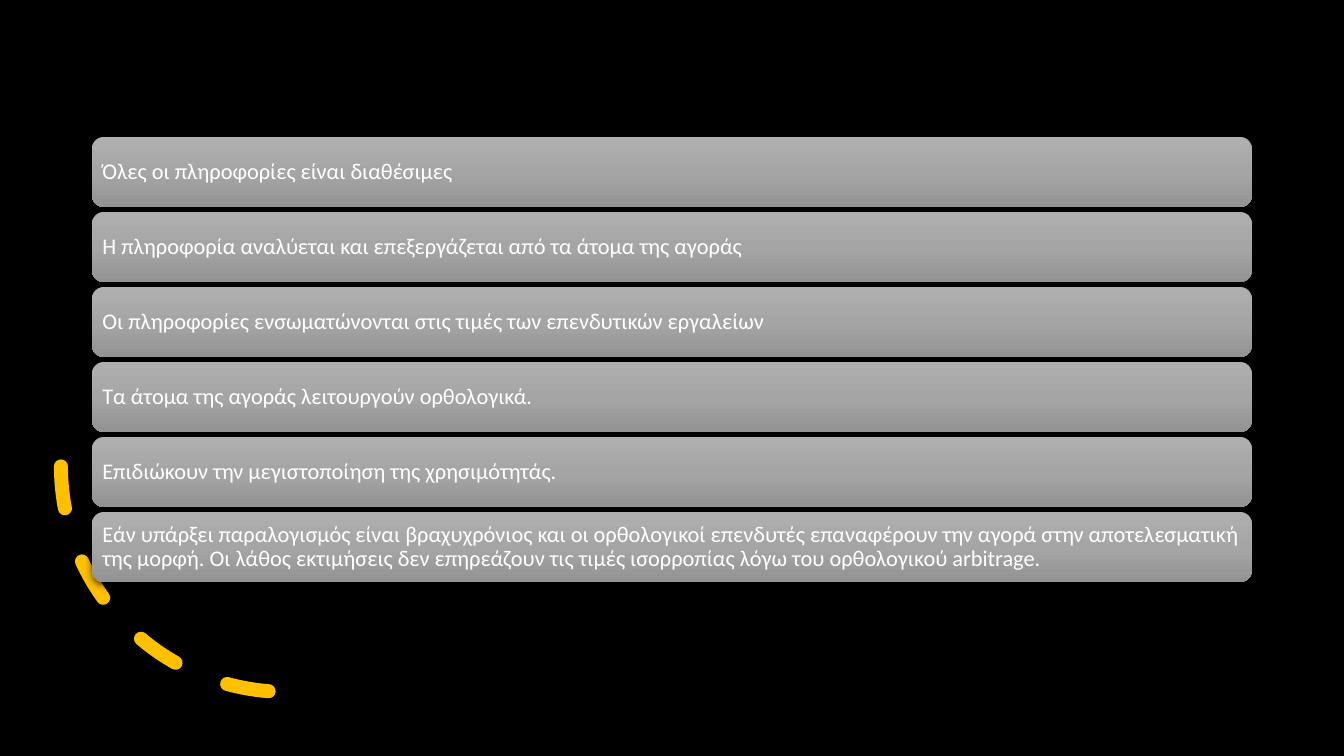
from copy import deepcopy
from dataclasses import dataclass

from lxml import etree
from pptx import Presentation
from pptx import util as u
from pptx.dml.color import RGBColor
from pptx.enum import dml, shapes, text
from pptx.oxml.ns import qn
from pptx.shapes.autoshape import Shape
from pptx.slide import Slide

EMU_PER_PX = 12192000 / 1344
BAR_LEFT, BAR_TOP, BAR_WIDTH, BAR_HEIGHT, BAR_PITCH = 92, 137, 1160, 70, 75
BAR_GRADIENT = {0: "AFAFAF", 0.5: "A5A5A5", 1: "939393"}
STATEMENTS = (
    "Όλες οι πληροφορίες είναι διαθέσιμες",
    "Η πληροφορία αναλύεται και επεξεργάζεται από τα άτομα της αγοράς",
    "Οι πληροφορίες ενσωματώνονται στις τιμές των επενδυτικών εργαλείων",
    "Τα άτομα της αγοράς λειτουργούν ορθολογικά.",
    "Επιδιώκουν την μεγιστοποίηση της χρησιμότητάς.",
    "Εάν υπάρξει παραλογισμός είναι βραχυχρόνιος και οι ορθολογικοί επενδυτές "
    "επαναφέρουν την αγορά στην αποτελεσματική της μορφή. Οι λάθος εκτιμήσεις δεν "
    "επηρεάζουν τις τιμές ισορροπίας λόγω του ορθολογικού arbitrage.",
)


@dataclass(frozen=True)
class Box:
    left: int
    top: int
    width: int
    height: int


@dataclass(frozen=True)
class Bar:
    box: Box
    statement: str


def px(length: int) -> u.Emu:
    return u.Emu(round(length * EMU_PER_PX))


def color(value: str) -> RGBColor:
    return RGBColor.from_string(value)


def apply_format(target: object, values: dict) -> None:
    for name, value in values.items():
        setattr(target, name, value)


def add_shape(slide: Slide, kind: shapes.MSO_SHAPE, box: Box) -> Shape:
    shape = slide.shapes.add_shape(
        kind, px(box.left), px(box.top), px(box.width), px(box.height)
    )
    shape.shadow.inherit = False
    shape.line.fill.background()
    return shape


def add_backdrop(slide: Slide) -> None:
    shape = add_shape(slide, shapes.MSO_SHAPE.RECTANGLE, Box(0, -1, 1344, 757))
    shape.fill.solid()
    shape.fill.fore_color.rgb = color("000000")


def add_dashed_arc(slide: Slide) -> None:
    shape = add_shape(slide, shapes.MSO_SHAPE.ARC, Box(61, 241, 451, 451))
    shape.fill.background()
    shape.rotation = 90
    shape._element.spPr.find(qn("a:xfrm")).set("flipV", "1")
    shape.line.color.rgb = color("FFC000")
    apply_format(
        shape.line, {"width": u.Pt(10), "dash_style": dml.MSO_LINE.DASH}
    )
    shape._element.spPr.find(qn("a:ln")).set("cap", "rnd")


def fill_gradient(shape: Shape) -> None:
    shape.fill.gradient()
    shape.fill.gradient_angle = 270
    stop_list = shape._element.spPr.find(qn("a:gradFill")).find(qn("a:gsLst"))
    stop_list.insert(1, deepcopy(stop_list[0]))
    for stop, (position, value) in zip(
        shape.fill.gradient_stops, BAR_GRADIENT.items()
    ):
        stop.position = position
        stop.color.rgb = color(value)


def add_shadow(shape: Shape) -> None:
    effects = shape._element.spPr.find(qn("a:effectLst"))
    shadow = etree.SubElement(
        effects,
        qn("a:outerShdw"),
        blurRad=str(u.Pt(4.5)),
        dist=str(u.Pt(1.5)),
        dir="5400000",
        algn="ctr",
        rotWithShape="0",
    )
    shade = etree.SubElement(shadow, qn("a:srgbClr"), val="000000")
    etree.SubElement(shade, qn("a:alpha"), val="63000")


def add_bar(slide: Slide, bar: Bar) -> None:
    shape = add_shape(slide, shapes.MSO_SHAPE.ROUNDED_RECTANGLE, bar.box)
    fill_gradient(shape)
    add_shadow(shape)
    frame = shape.text_frame
    margins = ("margin_left", "margin_top", "margin_right", "margin_bottom")
    apply_format(frame, dict.fromkeys(margins, px(7)))
    apply_format(
        frame, {"word_wrap": True, "vertical_anchor": text.MSO_ANCHOR.MIDDLE}
    )
    paragraph = frame.paragraphs[0]
    apply_format(
        paragraph, {"alignment": text.PP_ALIGN.LEFT, "line_spacing": 0.9}
    )
    run = paragraph.add_run()
    run.text = bar.statement
    apply_format(run.font, {"name": "Calibri", "size": u.Pt(16)})
    run.font.color.rgb = color("FFFFFF")


def main() -> None:
    presentation = Presentation()
    apply_format(
        presentation, {"slide_width": px(1344), "slide_height": px(756)}
    )
    slide = presentation.slides.add_slide(presentation.slide_layouts[6])
    add_backdrop(slide)
    add_dashed_arc(slide)
    for index, statement in enumerate(STATEMENTS):
        top = BAR_TOP + index * BAR_PITCH
        add_bar(slide, Bar(Box(BAR_LEFT, top, BAR_WIDTH, BAR_HEIGHT), statement))
    presentation.save("out.pptx")


if __name__ == "__main__":
    main()
